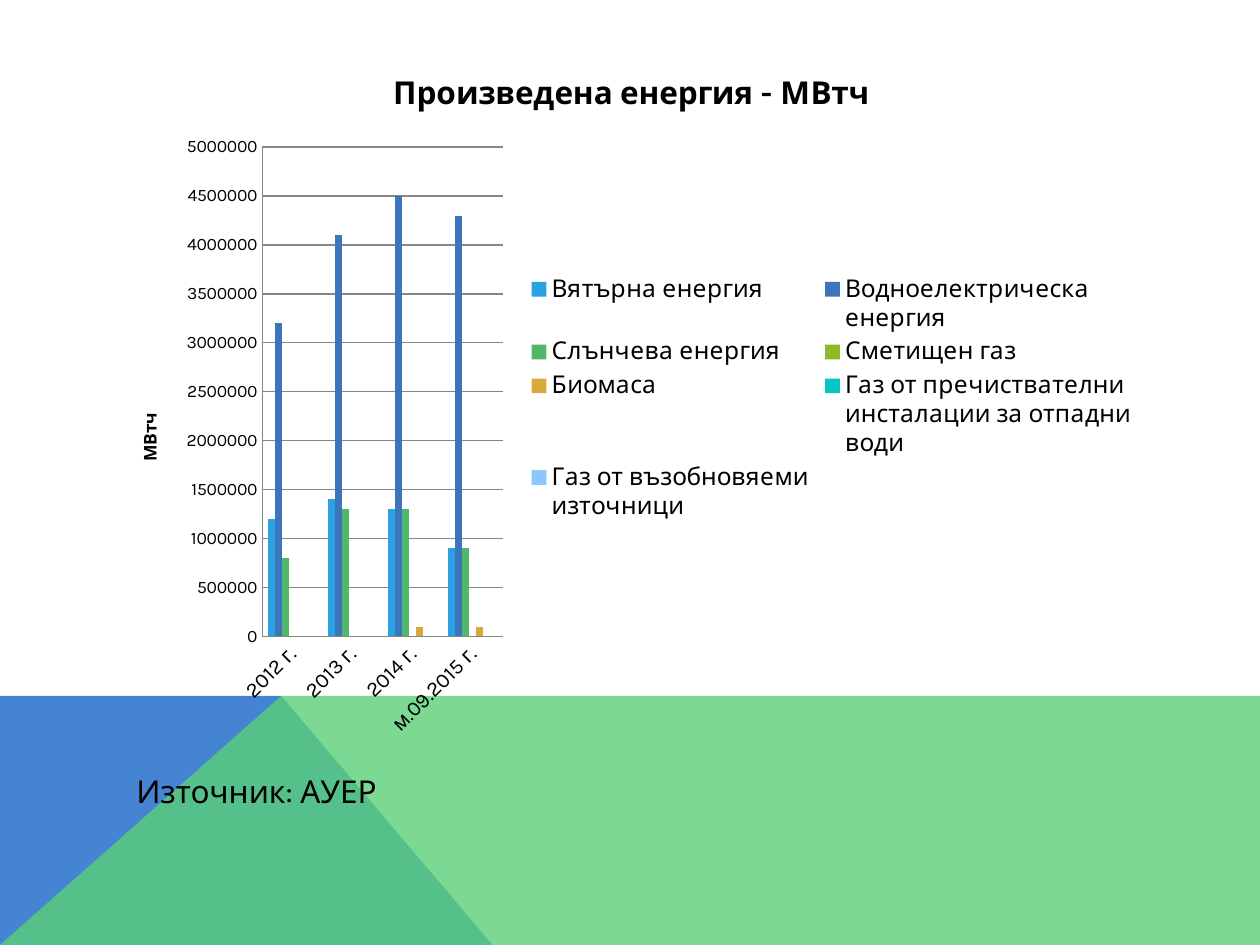
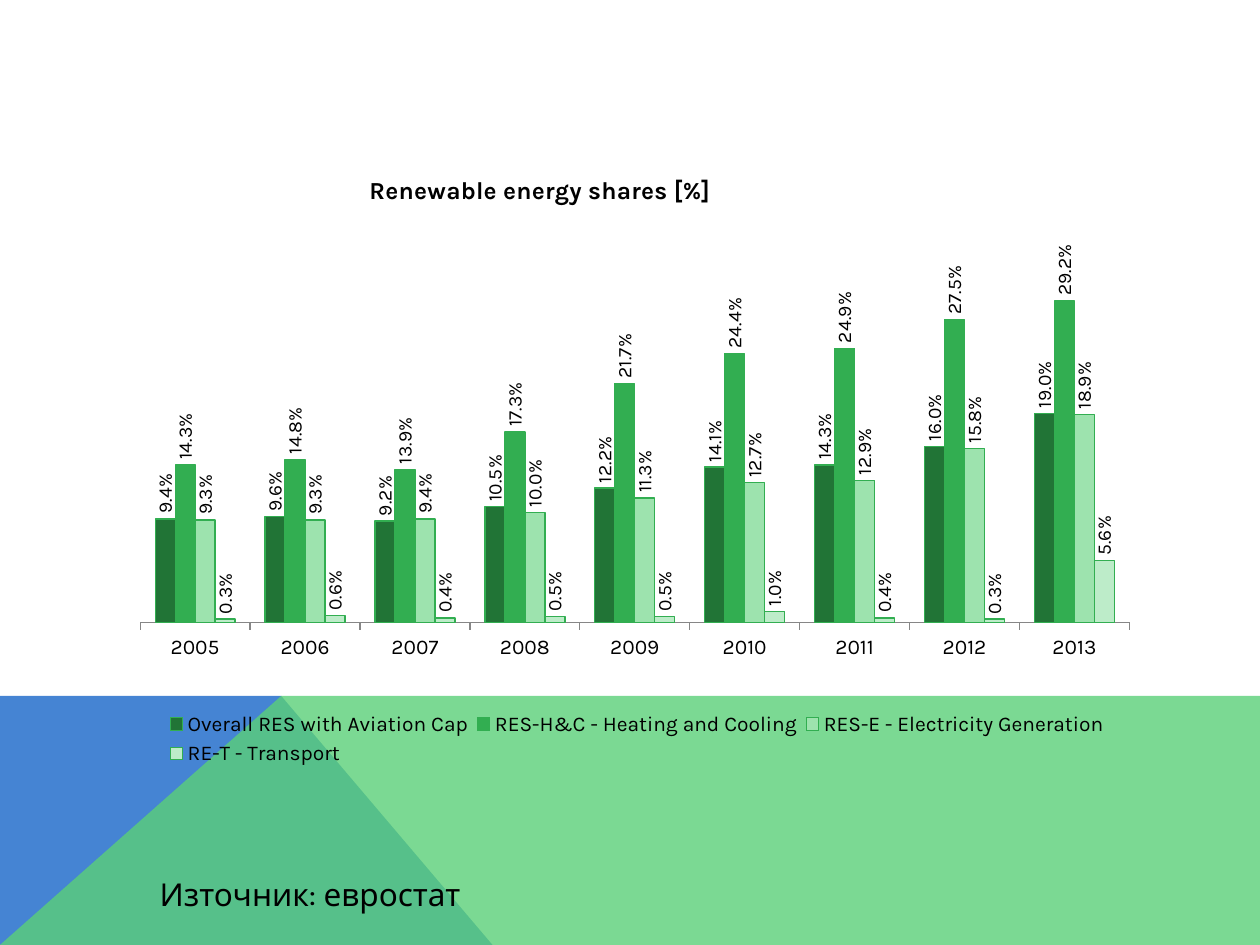
"""Build two slides with charts of renewable energy output and shares."""
from lxml.etree import SubElement
from pptx import Presentation
from pptx.chart.data import CategoryChartData
from pptx.dml.color import RGBColor
from pptx.enum.chart import XL_CHART_TYPE as ChartType
from pptx.enum.chart import XL_LABEL_POSITION as LabelPosition
from pptx.enum.chart import XL_LEGEND_POSITION as LegendPosition
from pptx.enum.chart import XL_TICK_MARK as TickMark
from pptx.oxml import parse_xml
from pptx.oxml.ns import nsdecls, qn
from pptx.util import Cm, Pt

FONT = "Karla"
COLORS = {
    "text": "000000", "axis": "868686", "blue": "4584D3", "green": "5BD078",
    "wind": "2CA1E2", "hydro": "3D75BC", "solar": "51B86B", "landfill": "92B823",
    "biomass": "D9AA39", "sewage": "05C6C2", "renewable gas": "8CC8FF",
    "overall": "217436", "heating": "32AE51", "electricity": "9DE3AE",
    "transport": "BDECC9",
}
BANDS = [
    ("blue", 100, [(0, 19.05), (0, 14.03), (5.67, 14.03), (9.93, 19.05)]),
    ("green", 80, [(0, 19.05), (5.67, 14.03), (25.4, 14.03), (25.4, 19.05)]),
]
OUTPUT_YEARS = ["2012 г.", "2013 г.", "2014 г.", "м.09.2015 г."]
OUTPUT = [
    ("Вятърна енергия", "wind", [1200000, 1400000, 1300000, 900000]),
    ("Водноелектрическа енергия", "hydro", [3200000, 4100000, 4500000, 4300000]),
    ("Слънчева енергия", "solar", [800000, 1300000, 1300000, 900000]),
    ("Сметищен газ", "landfill", [0, 0, 0, 0]),
    ("Биомаса", "biomass", [0, 0, 100000, 100000]),
    ("Газ от пречиствателни инсталации за отпадни води", "sewage", [0, 0, 0, 0]),
    ("Газ от възобновяеми източници", "renewable gas", [None, None, 0, 0]),
]
SHARE_YEARS = [str(year) for year in range(2005, 2014)]
SHARES = [
    ("Overall RES with Aviation Cap", "overall",
     [0.094, 0.096, 0.092, 0.105, 0.122, 0.141, 0.143, 0.16, 0.19]),
    ("RES-H&C - Heating and Cooling", "heating",
     [0.143, 0.148, 0.139, 0.173, 0.217, 0.244, 0.249, 0.275, 0.292]),
    ("RES-E - Electricity Generation", "electricity",
     [0.093, 0.093, 0.094, 0.1, 0.113, 0.127, 0.129, 0.158, 0.189]),
    ("RE-T - Transport", "transport",
     [0.003, 0.006, 0.004, 0.005, 0.005, 0.01, 0.004, 0.003, 0.056]),
]


class EnergyDeck:
    """Hold the deck style and the current page."""

    def __init__(self):
        """Start an empty deck."""
        self.deck = Presentation()
        self.deck.slide_width, self.deck.slide_height = Cm(25.4), Cm(19.05)
        self.page = None

    def color(self, name):
        """Return a named colour."""
        return RGBColor.from_string(COLORS[name])

    def style(self, font, size, bold=False):
        """Apply the deck font."""
        font.name, font.size, font.bold = FONT, Pt(size), bold
        font.color.rgb = self.color("text")

    def add_page(self):
        """Add a page with the coloured bands."""
        self.page = self.deck.slides.add_slide(self.deck.slide_layouts[6])
        for name, opacity, points in BANDS:
            self.band(name, opacity, points)

    def band(self, name, opacity, points):
        """Draw one band along the foot of the page."""
        start, *rest = [(Cm(x), Cm(y)) for x, y in points]
        builder = self.page.shapes.build_freeform(*start)
        builder.add_line_segments(rest, close=True)
        shape = builder.convert_to_shape()
        shape.shadow.inherit = False
        shape.fill.solid()
        shape.fill.fore_color.rgb = self.color(name)
        shape.line.fill.background()
        if opacity < 100:
            fill = shape._element.spPr.find(qn("a:solidFill"))
            SubElement(fill[0], qn("a:alpha")).set("val", str(opacity * 1000))

    def source(self, text, left, top):
        """Write the source line."""
        box = self.page.shapes.add_textbox(Cm(left), Cm(top), Cm(19.61), Cm(1.02))
        box.text_frame.word_wrap = True
        para = box.text_frame.paragraphs[0]
        para.text = text
        self.style(para.font, 18)

    def column_chart(self, place, years, rows, number_format):
        """Add a clustered column chart with coloured series."""
        data = CategoryChartData(number_format=number_format)
        data.categories = years
        for name, _, values in rows:
            data.add_series(name, values)
        frame = self.page.shapes.add_chart(
            ChartType.COLUMN_CLUSTERED, *map(Cm, place), data)
        chart = frame.chart
        self.style(chart.font, 10)
        plot = chart.plots[0]
        plot.gap_width, plot.overlap, plot.vary_by_categories = 150, 0, False
        for series, (_, name, _) in zip(plot.series, rows):
            series.format.fill.solid()
            series.format.fill.fore_color.rgb = self.color(name)
        self.style(chart.category_axis.tick_labels.font, 12)
        for axis in (chart.category_axis, chart.value_axis):
            axis.format.line.color.rgb = self.color("axis")
            axis.major_tick_mark = TickMark.NONE
        return chart

    def title(self, holder, text, size):
        """Title a chart or an axis."""
        holder.has_title = True
        title = holder.chart_title if hasattr(holder, "chart_title") else holder.axis_title
        para = title.text_frame.paragraphs[0]
        para.text = text
        self.style(para.font, size, True)
        return title._element

    def legend(self, chart, position, size):
        """Show the legend."""
        chart.has_legend = True
        chart.legend.position = position
        chart.legend.include_in_layout = False
        self.style(chart.legend.font, size)
        return chart.legend._element

    def value_labels(self, series, size):
        """Show upright values above the columns."""
        labels = series.data_labels
        labels.show_value = True
        labels.position = LabelPosition.OUTSIDE_END
        labels.number_format, labels.number_format_is_linked = "0.0%", False
        self.style(labels.font, size)
        self.rotate(labels, -90)

    def rotate(self, labels, degrees):
        """Turn labels by an angle."""
        body = next(labels._element.iter(qn("a:bodyPr")))
        body.set("rot", str(degrees * 60000))
        body.set("vert", "horz")

    def layout(self, element, index, inner=False, **parts):
        """Place a chart part by fractions of the chart."""
        for old in element.findall(qn("c:layout")):
            element.remove(old)
        target = '<c:layoutTarget val="inner"/>' if inner else ""
        modes = "".join(f'<c:{key}Mode val="edge"/>' for key in "xy")
        sizes = "".join(f'<c:{key} val="{value}"/>' for key, value in parts.items())
        element.insert(index, parse_xml(
            f'<c:layout {nsdecls("c")}><c:manualLayout>{target}{modes}{sizes}'
            "</c:manualLayout></c:layout>"))

    def plot_area(self, chart, **parts):
        """Place the plot inside the chart."""
        self.layout(chart._chartSpace.chart.plotArea, 0, inner=True, **parts)


def output_page(deck):
    """Build the page on energy produced."""
    deck.add_page()
    chart = deck.column_chart((2.28, 0.92, 20.9, 14.2), OUTPUT_YEARS, OUTPUT, "General")
    deck.title(chart, "Произведена енергия - МВтч", 18)
    deck.title(chart.value_axis, "МВтч", 10)
    deck.legend(chart, LegendPosition.RIGHT, 14)
    deck.plot_area(chart, x=0.144, y=0.144, w=0.232, h=0.695)
    deck.rotate(chart.category_axis, -45)
    axis = chart.value_axis
    axis.minimum_scale, axis.maximum_scale, axis.major_unit = 0, 5000000, 500000
    axis.major_gridlines.format.line.color.rgb = deck.color("axis")
    deck.source("Източник: АУЕР", 2.5, 15.44)


def shares_page(deck):
    """Build the page on renewable shares."""
    deck.add_page()
    chart = deck.column_chart((2.3, 2.92, 21.08, 12.67), SHARE_YEARS, SHARES, "0.0%")
    title = deck.title(chart, "Renewable energy shares [%]", 14)
    deck.layout(title, 1, x=0.24, y=0.04)
    legend = deck.legend(chart, LegendPosition.BOTTOM, 12)
    deck.layout(legend, 1, x=0.045, y=0.895, w=0.91, h=0.1)
    deck.plot_area(chart, x=0.025, y=0.147, w=0.946, h=0.613)
    chart.category_axis.major_tick_mark = TickMark.OUTSIDE
    axis = chart.value_axis
    axis.minimum_scale, axis.maximum_scale = 0, 0.35
    axis.has_major_gridlines = axis.visible = False
    for series in chart.plots[0].series:
        series.format.line.color.rgb = deck.color("heating")
        series.format.line.width = Pt(0.75)
        deck.value_labels(series, 11)
    deck.source("Източник: евростат", 2.97, 17.51)


def main():
    """Build and save the deck."""
    deck = EnergyDeck()
    output_page(deck)
    shares_page(deck)
    deck.deck.save("out.pptx")


if __name__ == "__main__":
    main()
